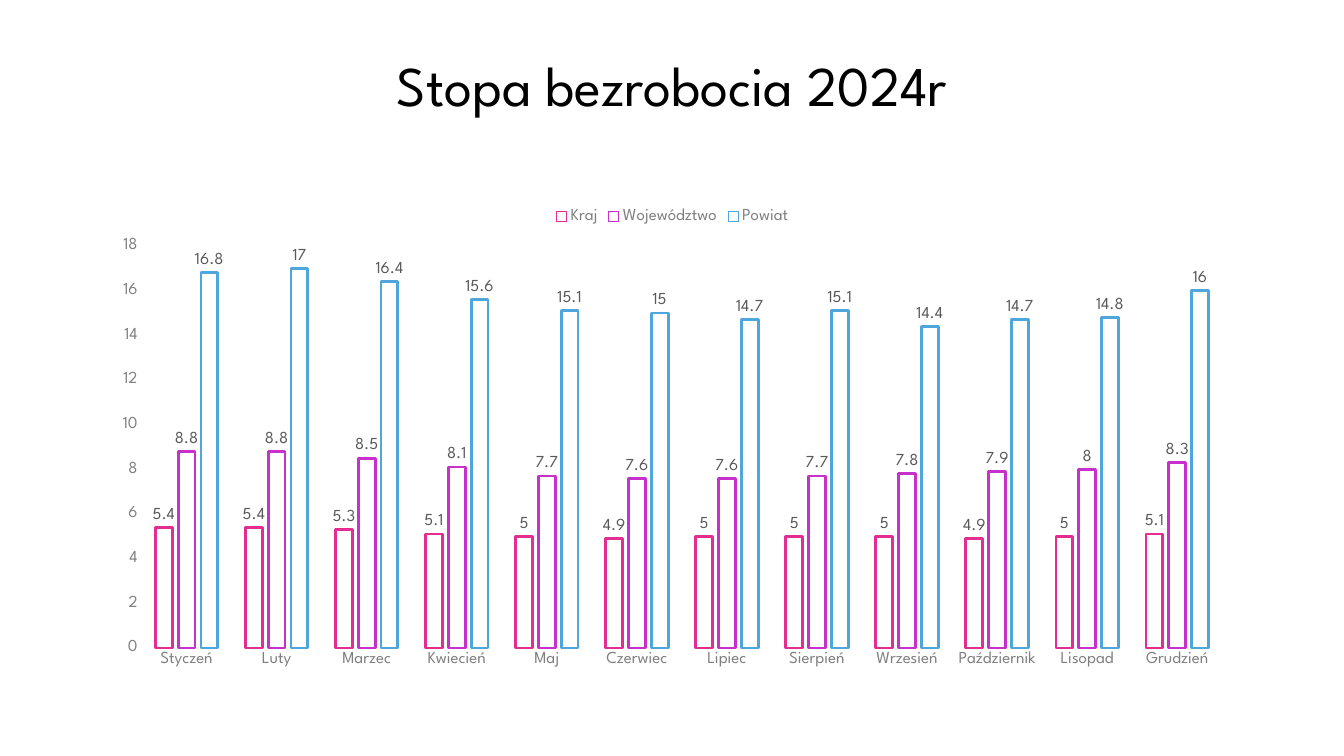
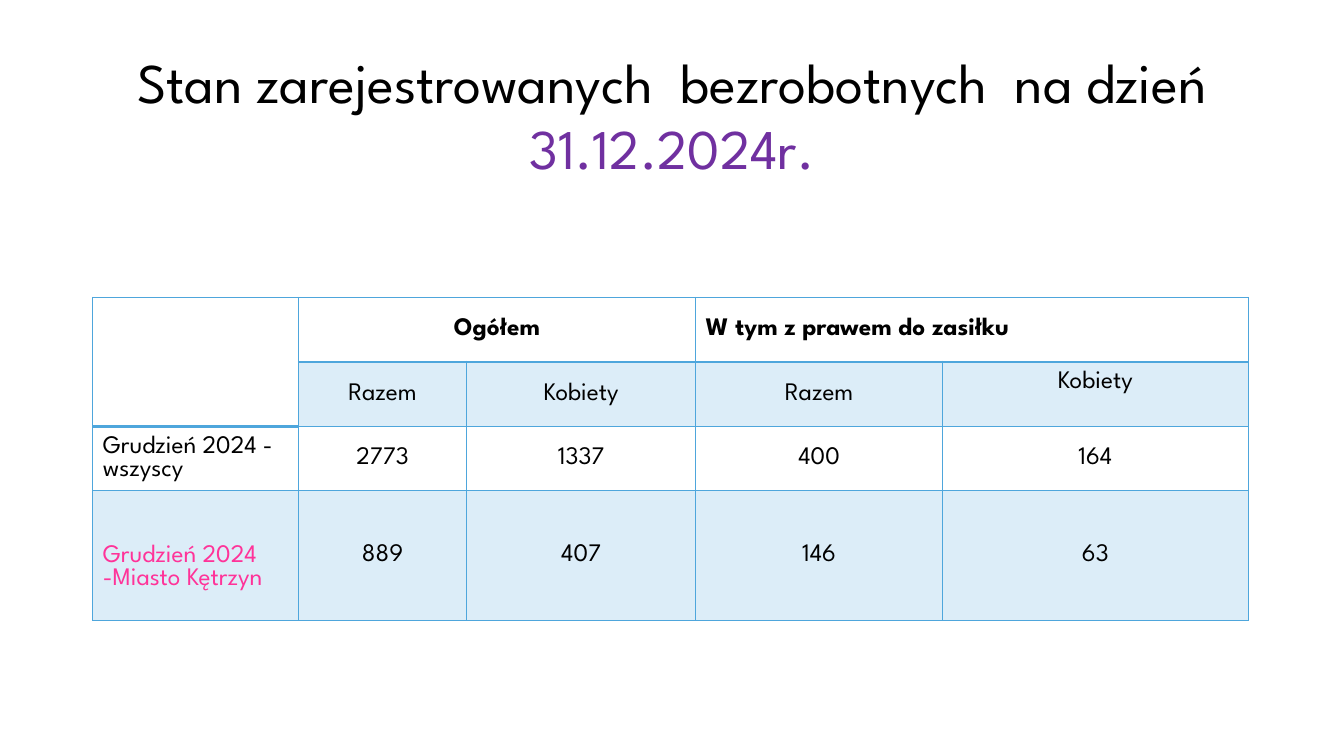
from lxml.etree import SubElement as Sub
from pptx import Presentation
from pptx.chart.data import CategoryChartData as Data
from pptx.dml.color import RGBColor as RGB
from pptx.enum.chart import XL_CHART_TYPE as Kind, XL_LABEL_POSITION as Spot
from pptx.enum.chart import XL_LEGEND_POSITION as Side, XL_TICK_MARK as Tick
from pptx.enum.text import MSO_ANCHOR as Anchor, MSO_AUTO_SIZE as Fit, PP_ALIGN as Align
from pptx.oxml.ns import qn
from pptx.util import Pt

PX = 9144  # 100 px to the inch
FONT = "League Spartan"
BLACK = RGB(0, 0, 0)
GREY = RGB(128, 128, 128)
DARK = RGB(89, 89, 89)
PURPLE = RGB(112, 48, 160)
PINK = RGB(255, 51, 153)
ROSE = RGB(227, 45, 145)
VIOLET = RGB(200, 48, 204)
BLUE = RGB(78, 166, 220)
PALE = RGB(220, 237, 248)


def style(font, size, color=BLACK, bold=False):
    font.name, font.size, font.bold = FONT, Pt(size), bold
    font.color.rgb = color


def write(frame, text, size=18, color=BLACK, bold=False, align=Align.CENTER, lead=None):
    """Append text to the last paragraph; each further line starts a new one."""
    for i, line in enumerate(text.split("\n")):
        para = frame.add_paragraph() if i else frame.paragraphs[-1]
        para.alignment = align
        if lead:
            para.line_spacing = Pt(lead)
        run = para.add_run()
        run.text = line
        style(run.font, size, color, bold)


deck = Presentation()
deck.slide_width, deck.slide_height = 1333 * PX, 750 * PX

# Titles
heads = [
    ((33, 40, 1267, 84), [("Stopa bezrobocia 2024r", BLACK)]),
    ((62, 39, 1209, 145), [("Stan zarejestrowanych  bezrobotnych  na dzień ", BLACK),
                           ("31.12.2024r.", PURPLE)]),
]
slides = []
for (x, y, w, h), parts in heads:
    slide = deck.slides.add_slide(deck.slide_layouts[5])
    title = slide.shapes.title
    title.left, title.top, title.width, title.height = x * PX, y * PX, w * PX, h * PX
    frame = title.text_frame
    frame.auto_size, frame.word_wrap = Fit.NONE, True
    frame.vertical_anchor = Anchor.MIDDLE
    frame.margin_top = 9 * PX
    for text, color in parts:
        write(frame, text, size=40, color=color, lead=47)
    slides.append(slide)

# Unemployment rate chart
rates = [
    ("Kraj", ROSE, (5.4, 5.4, 5.3, 5.1, 5, 4.9, 5, 5, 5, 4.9, 5, 5.1)),
    ("Województwo", VIOLET, (8.8, 8.8, 8.5, 8.1, 7.7, 7.6, 7.6, 7.7, 7.8, 7.9, 8, 8.3)),
    ("Powiat", BLUE, (16.8, 17, 16.4, 15.6, 15.1, 15, 14.7, 15.1, 14.4, 14.7, 14.8, 16)),
]
data = Data()
data.categories = ["Styczeń", "Luty", "Marzec", "Kwiecień", "Maj", "Czerwiec", "Lipiec",
                   "Sierpień", "Wrzesień", "Październik", "Lisopad", "Grudzień"]
for name, color, vals in rates:
    data.add_series(name, vals)
chart = slides[0].shapes.add_chart(
    Kind.COLUMN_CLUSTERED, 99 * PX, 196 * PX, 1136 * PX, 476 * PX, data).chart
style(chart.font, 10)
chart.has_title = False
chart.has_legend = True
chart.legend.position = Side.TOP
chart.legend.include_in_layout = False
style(chart.legend.font, 12, GREY)
for axis in (chart.category_axis, chart.value_axis):
    axis.has_major_gridlines = False
    axis.major_tick_mark = axis.minor_tick_mark = Tick.NONE
    axis.format.line.fill.background()
    style(axis.tick_labels.font, 12, GREY)
axis = chart.value_axis
axis.minimum_scale, axis.maximum_scale, axis.major_unit = 0, 18, 2
plot = chart.plots[0]
plot.gap_width, plot.overlap, plot.vary_by_categories = 164, -35, False
for bars, (name, color, vals) in zip(plot.series, rates):
    bars.format.fill.background()
    bars.format.line.color.rgb = color
    bars.format.line.width = Pt(2)
    labels = bars.data_labels
    labels.show_value = True
    labels.position = Spot.OUTSIDE_END
    style(labels.font, 12, DARK)

# Table of the registered unemployed
rows = [
    ("", "Ogółem", "", "W tym z prawem do zasiłku", ""),
    ("", "Razem", "Kobiety", "Razem", "Kobiety"),
    ("Grudzień 2024 - wszyscy", "2773", "1337", "400", "164"),
    ("Grudzień 2024\n-Miasto Kętrzyn", "889", "407", "146", "63"),
]
widths, heights = (204, 167, 227, 245, 303), (64, 64, 64, 129)
table = slides[1].shapes.add_table(
    4, 5, 92 * PX, 295 * PX, sum(widths) * PX, sum(heights) * PX).table
table.first_row = table.horz_banding = False
for col, w in zip(table.columns, widths):
    col.width = w * PX
for row, h in zip(table.rows, heights):
    row.height = h * PX
for top, left, end, right in ((0, 0, 1, 0), (0, 1, 0, 2), (0, 3, 0, 4)):
    table.cell(top, left).merge(table.cell(end, right))

for r, texts in enumerate(rows):
    for c, text in enumerate(texts):
        cell = table.cell(r, c)
        cell.vertical_anchor = Anchor.MIDDLE
        props = cell._tc.get_or_add_tcPr()
        for side in "LRTB":
            thick = (r, side) in ((0, "B"), (1, "T"))
            line = Sub(props, qn("a:ln" + side), w=str(Pt(2 if thick else 1)))
            Sub(Sub(line, qn("a:solidFill")), qn("a:srgbClr"), val=str(BLUE))
        if r in (1, 3) and (r, c) != (1, 0):
            cell.fill.solid()
            cell.fill.fore_color.rgb = PALE
        else:
            cell.fill.background()
        if text:
            flush = c == 0 or (r, c) == (0, 3)
            write(cell.text_frame, text, bold=r == 0,
                  color=PINK if (r, c) == (3, 0) else BLACK,
                  align=Align.LEFT if flush else Align.CENTER)
table.cell(1, 4).margin_bottom = 29 * PX
table.cell(3, 0).margin_top = 29 * PX

deck.save("out.pptx")
